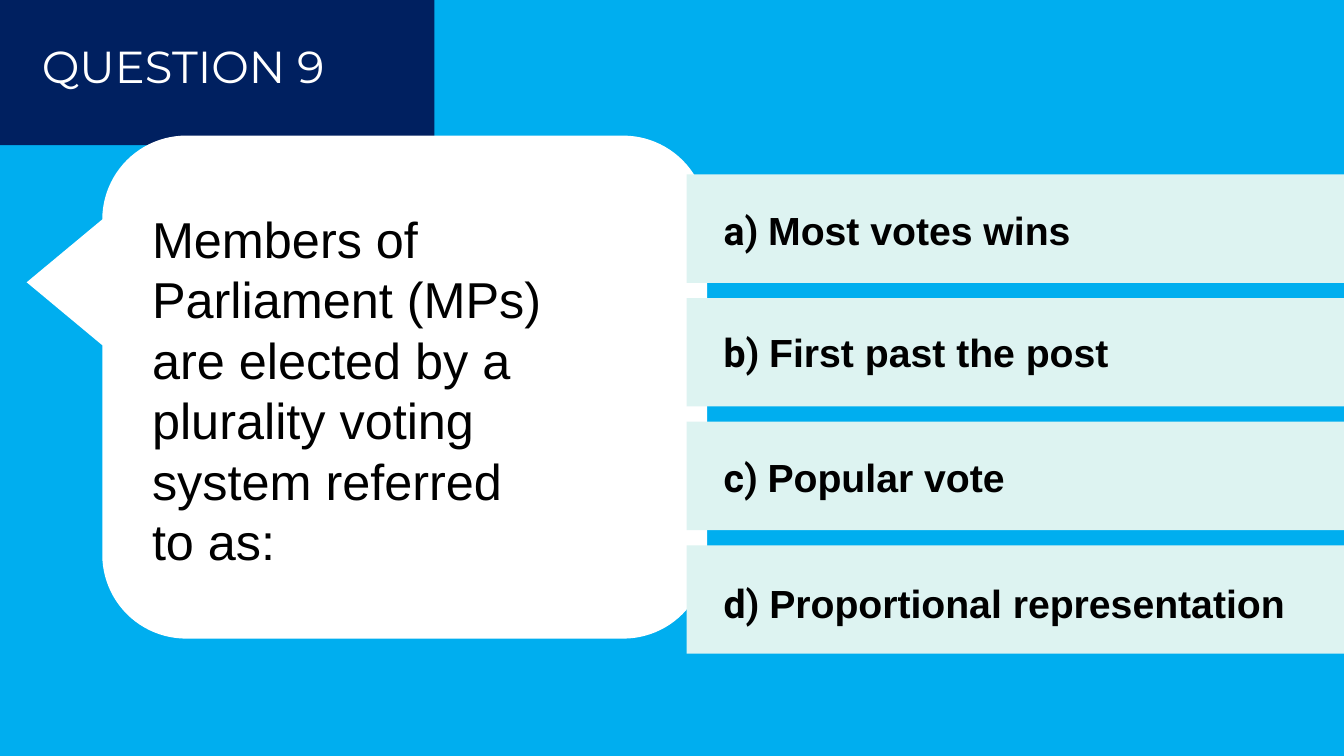
from dataclasses import dataclass

from pptx import Presentation
from pptx.dml.color import RGBColor
from pptx.enum.shapes import MSO_SHAPE
from pptx.util import Pt

SLIDE_WIDTH, SLIDE_HEIGHT = 960, 540
SKY, NAVY, WHITE, MINT, BLACK = "00AEEF", "002060", "FFFFFF", "DDF3F1", "000000"
ANSWER_LEFT, ANSWER_TOP, ANSWER_PITCH, ANSWER_HEIGHT = 490.4, 124.6, 88.3, 77.5


@dataclass(frozen=True)
class Box:
    left: float
    top: float
    width: float
    height: float

    def lengths(self) -> tuple:
        return Pt(self.left), Pt(self.top), Pt(self.width), Pt(self.height)


@dataclass(frozen=True)
class Answer:
    letter: str
    wording: str
    text_top: float


ANSWERS = [
    Answer("a) ", "Most votes wins", 144),
    Answer("b) ", "First past the post", 231),
    Answer("c) ", "Popular vote", 320.4),
    Answer("d) ", "Proportional representation", 410.4),
]
QUESTION = (
    "Members of \nParliament (MPs) \nare elected by a \n"
    "plurality voting \nsystem referred \nto as:"
)


def color(hex_code: str) -> RGBColor:
    return RGBColor.from_string(hex_code)


def add_panel(slide, kind: MSO_SHAPE, box: Box, fill: str):
    panel = slide.shapes.add_shape(kind, *box.lengths())
    panel.shadow.inherit = False
    panel.fill.solid()
    panel.fill.fore_color.rgb = color(fill)
    panel.line.fill.background()
    return panel


def add_paragraph(slide, box: Box, inset: tuple[float, float] = (7.2, 3.6)):
    frame = slide.shapes.add_textbox(*box.lengths()).text_frame
    frame.word_wrap = True
    frame.margin_left = frame.margin_right = Pt(inset[0])
    frame.margin_top = frame.margin_bottom = Pt(inset[1])
    return frame.paragraphs[0]


def style_run(run, font: str, size: float, fill: str, bold: bool = False) -> None:
    run.font.name = font
    run.font.size = Pt(size)
    run.font.bold = bold
    run.font.color.rgb = color(fill)


def add_heading(slide) -> None:
    add_panel(slide, MSO_SHAPE.RECTANGLE, Box(0, 0, 310.3, 103.7), NAVY)
    heading = add_paragraph(slide, Box(20.9, 23, 289.4, 53.3), (9, 9))
    heading.text = "QUESTION 9"
    heading.line_spacing = 0.9
    style_run(heading.runs[0], "Montserrat", 32, WHITE)


def add_question(slide) -> None:
    bubble = add_panel(
        slide, MSO_SHAPE.ROUNDED_RECTANGULAR_CALLOUT, Box(109.4, 60.5, 359.3, 432), WHITE
    )
    bubble.rotation = 90
    question = add_paragraph(slide, Box(101.5, 145, 361.4, 269.3))
    question.text = QUESTION
    question.line_spacing = Pt(43.2)
    for run in question.runs:
        style_run(run, "Arial", 36, BLACK)


def add_answer(slide, row: int, answer: Answer) -> None:
    bar = Box(
        ANSWER_LEFT, ANSWER_TOP + row * ANSWER_PITCH, SLIDE_WIDTH - ANSWER_LEFT, ANSWER_HEIGHT
    )
    add_panel(slide, MSO_SHAPE.RECTANGLE, bar, MINT)
    line = add_paragraph(slide, Box(509.8, answer.text_top, 450, 41))
    line.text = answer.letter
    line.add_run().text = answer.wording
    for run, font in zip(line.runs, ("Roboto", "Arial")):
        style_run(run, font, 28, BLACK, bold=True)


def main() -> None:
    deck = Presentation()
    deck.slide_width, deck.slide_height = Pt(SLIDE_WIDTH), Pt(SLIDE_HEIGHT)
    slide = deck.slides.add_slide(deck.slide_layouts[6])
    slide.background.fill.solid()
    slide.background.fill.fore_color.rgb = color(SKY)

    # Heading, then the question bubble
    add_heading(slide)
    add_question(slide)

    # Answers overlap the bubble's right edge
    for row, answer in enumerate(ANSWERS):
        add_answer(slide, row, answer)

    deck.save("out.pptx")


if __name__ == "__main__":
    main()
